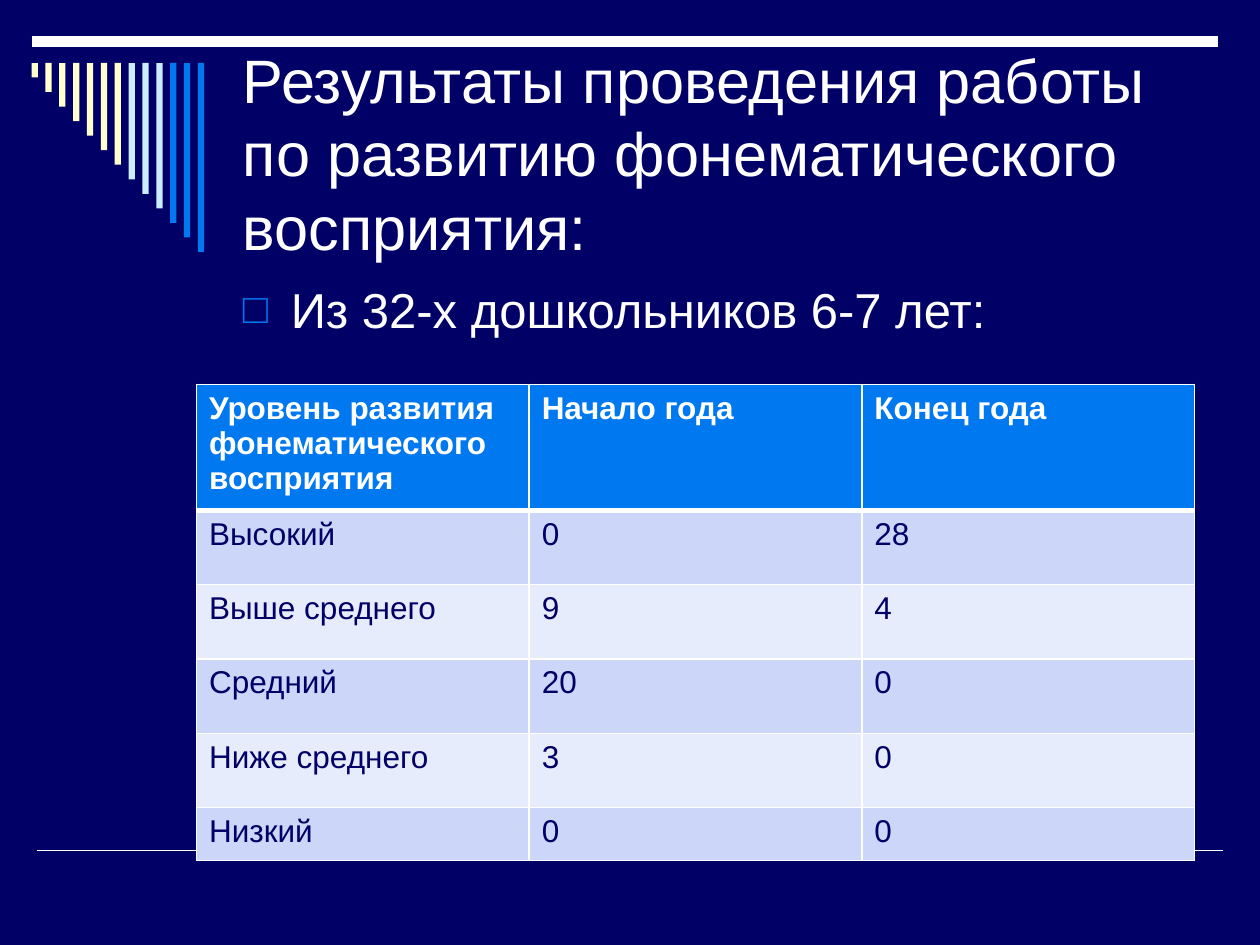
from dataclasses import dataclass

from lxml import etree
from pptx import Presentation
from pptx.dml.color import RGBColor
from pptx.enum.shapes import MSO_CONNECTOR, MSO_SHAPE
from pptx.enum.text import MSO_ANCHOR
from pptx.oxml.ns import qn
from pptx.util import Inches, Pt

STRAIGHT = MSO_CONNECTOR.STRAIGHT
RECTANGLE = MSO_SHAPE.RECTANGLE
TOP, MIDDLE = MSO_ANCHOR.TOP, MSO_ANCHOR.MIDDLE


@dataclass(frozen=True)
class Theme:
    font: str = "Arial"
    navy: str = "000066"
    white: str = "FFFFFF"
    cream: str = "FFFFCC"
    pale_blue: str = "CCECFF"
    blue: str = "0078F0"
    odd_row: str = "CBD6F9"
    even_row: str = "E7ECFC"
    title_size: float = 35
    title_leading: float = 42
    body_size: float = 28
    table_size: float = 18


THEME = Theme()
SLIDE_WIDTH, SLIDE_HEIGHT = 10, 7.5

TITLE = "Результаты проведения работы по развитию фонематического восприятия:"
BODY = "Из 32-х дошкольников 6-7 лет:"
RESULTS = [
    ("Уровень развития фонематического восприятия", "Начало года", "Конец года"),
    ("Высокий", "0", "28"),
    ("Выше среднего", "9", "4"),
    ("Средний", "20", "0"),
    ("Ниже среднего", "3", "0"),
    ("Низкий", "0", "0"),
]
ROW_HEIGHTS = [0.59] * 5 + [0.42]
BAR_COLORS = [THEME.cream] * 7 + [THEME.pale_blue] * 3 + [THEME.blue] * 3


def rgb(color):
    return RGBColor.from_string(color)


def paint(fill, color):
    fill.solid()
    fill.fore_color.rgb = rgb(color)


def write(paragraph, text, size, color, bold=False):
    run = paragraph.add_run()
    run.text = text
    formats = {"name": THEME.font, "size": Pt(size), "bold": bold}
    for name, value in formats.items():
        setattr(run.font, name, value)
    run.font.color.rgb = rgb(color)


def add_rule(slide, left, top, width, weight):
    rule = slide.shapes.add_connector(
        STRAIGHT, *map(Inches, (left, top, left + width, top)))
    rule.line.color.rgb = rgb(THEME.white)
    rule.line.width = Pt(weight)
    etree.SubElement(rule._element.spPr, qn("a:effectLst"))


def add_bars(slide, left, top, width, height):
    """Draw a fan of bars whose lengths grow evenly to the full height."""
    count = len(BAR_COLORS)
    bar_width = 0.05
    pitch = (width - bar_width) / (count - 1)
    for index, color in enumerate(BAR_COLORS):
        box = (left + index * pitch, top, bar_width, height * (index + 1) / count)
        bar = slide.shapes.add_shape(RECTANGLE, *map(Inches, box))
        bar.shadow.inherit = False
        paint(bar.fill, color)
        bar.line.fill.background()


def add_text(slide, box, anchor, text, size):
    frame = slide.shapes.add_textbox(*map(Inches, box)).text_frame
    frame.word_wrap = True
    frame.vertical_anchor = anchor
    paragraph = frame.paragraphs[0]
    write(paragraph, text, size, THEME.white)
    return paragraph


def add_title(slide, *box):
    paragraph = add_text(slide, box, MIDDLE, TITLE, THEME.title_size)
    paragraph.line_spacing = Pt(THEME.title_leading)


def add_body(slide, *box):
    paragraph = add_text(slide, box, TOP, BODY, THEME.body_size)
    paragraph.space_before = Pt(0.2 * THEME.body_size)
    properties = paragraph._p.get_or_add_pPr()
    properties.set("marL", str(Inches(0.38)))
    properties.set("indent", str(Inches(-0.38)))
    color = etree.SubElement(properties, qn("a:buClr"))
    etree.SubElement(color, qn("a:srgbClr"), val=THEME.blue)
    etree.SubElement(properties, qn("a:buSzPct"), val="85000")
    etree.SubElement(properties, qn("a:buFont"), typeface=THEME.font)
    etree.SubElement(properties, qn("a:buChar"), char="□")


def set_borders(cell, weights):
    """Put white borders, given as side to points, ahead of the cell's fill."""
    properties = cell._tc.get_or_add_tcPr()
    for index, (side, weight) in enumerate(weights.items()):
        border = etree.Element(qn(f"a:ln{side}"), w=str(Pt(weight)))
        fill = etree.SubElement(border, qn("a:solidFill"))
        etree.SubElement(fill, qn("a:srgbClr"), val=THEME.white)
        properties.insert(index, border)


def add_results(slide, left, top, width):
    column_count = len(RESULTS[0])
    box = (left, top, width, sum(ROW_HEIGHTS))
    table = slide.shapes.add_table(
        len(RESULTS), column_count, *map(Inches, box)).table
    for column in table.columns:
        column.width = Inches(width / column_count)
    for row_index, values in enumerate(RESULTS):
        table.rows[row_index].height = Inches(ROW_HEIGHTS[row_index])
        header = row_index == 0
        stripe = THEME.odd_row if row_index % 2 else THEME.even_row
        weights = {"L": 1, "R": 1, "T": 3 if row_index == 1 else 1,
                   "B": 3 if header else 1}
        for column_index, value in enumerate(values):
            cell = table.cell(row_index, column_index)
            paint(cell.fill, THEME.blue if header else stripe)
            set_borders(cell, weights)
            write(cell.text_frame.paragraphs[0], value, THEME.table_size,
                  THEME.white if header else THEME.navy, bold=header)


def build_slide(presentation):
    slide = presentation.slides.add_slide(presentation.slide_layouts[6])
    paint(slide.background.fill, THEME.navy)
    add_rule(slide, 0.29, 6.75, 9.42, weight=1)
    add_rule(slide, 0.25, 0.33, 9.42, weight=6)
    add_bars(slide, 0.25, 0.5, 1.37, 1.5)
    add_title(slide, 1.83, 0.5, 7.67, 1.42)
    add_body(slide, 1.83, 2.17, 7.67, 4.5)
    add_results(slide, 1.56, 3.05, 7.92)


def main():
    presentation = Presentation()
    presentation.slide_width = Inches(SLIDE_WIDTH)
    presentation.slide_height = Inches(SLIDE_HEIGHT)
    build_slide(presentation)
    presentation.save("out.pptx")


if __name__ == "__main__":
    main()
